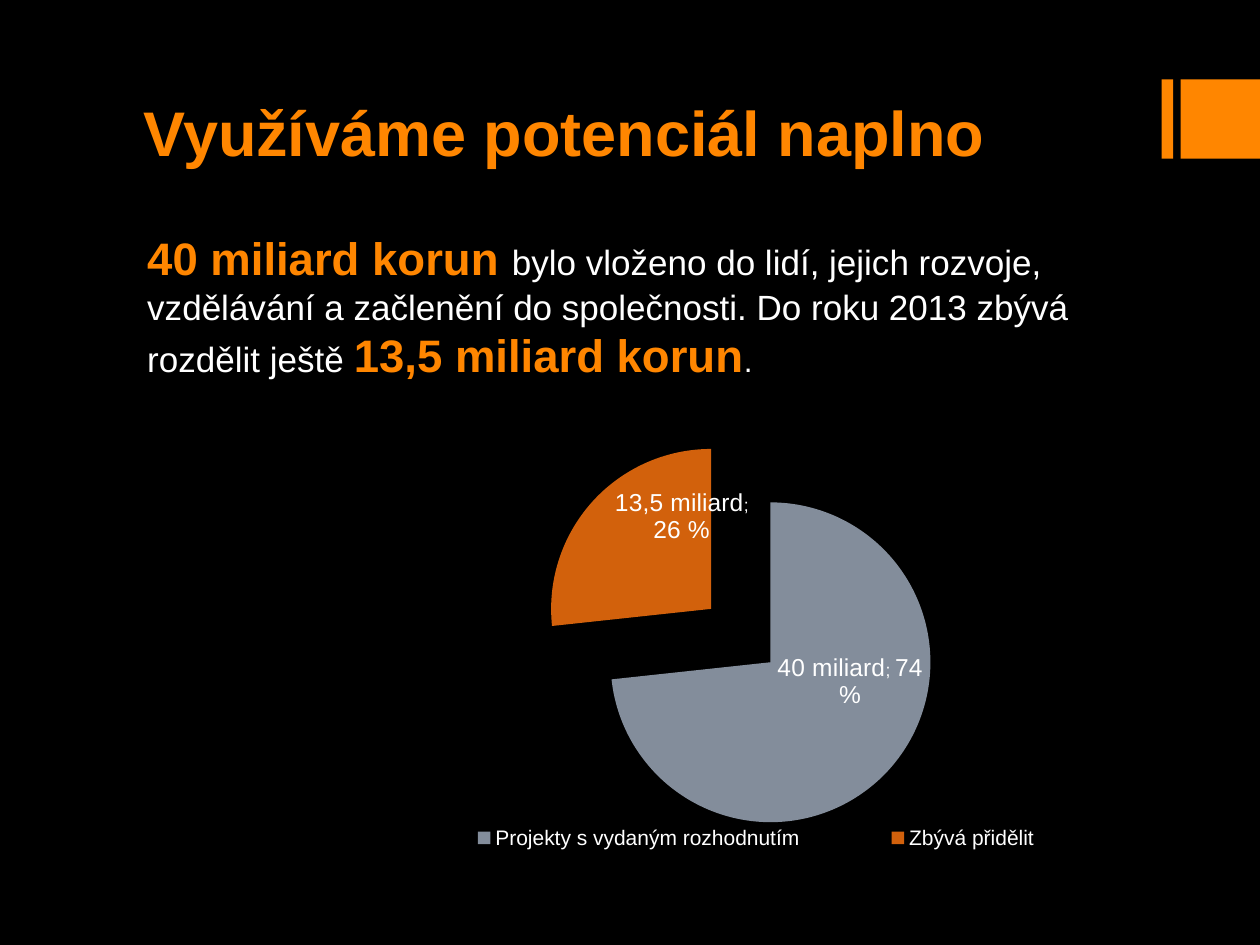
from lxml import etree
from pptx import Presentation
from pptx.chart.data import CategoryChartData
from pptx.dml.color import RGBColor
from pptx.enum.chart import XL_CHART_TYPE, XL_LABEL_POSITION, XL_LEGEND_POSITION
from pptx.enum.shapes import MSO_SHAPE
from pptx.enum.text import MSO_ANCHOR
from pptx.oxml.ns import qn
from pptx.util import Inches, Pt

PIE = XL_CHART_TYPE.PIE
CENTER = XL_LABEL_POSITION.CENTER
RIGHT = XL_LEGEND_POSITION.RIGHT
RECTANGLE = MSO_SHAPE.RECTANGLE
TOP, BOTTOM = MSO_ANCHOR.TOP, MSO_ANCHOR.BOTTOM

FONT = "Arial"
COLORS = {"background": "000000", "accent": "FF8600", "text": "FFFFFF",
          "allocated": "838D9B", "remaining": "D2610C"}

# Runs are (text, size, colour, bold)
TITLE = [("Využíváme potenciál naplno", 36, "accent", True)]
BODY = [
    ("40 miliard korun ", 26, "accent", True),
    ("bylo vloženo do lidí, jejich rozvoje, vzdělávání a začlenění do "
     "společnosti. Do roku 2013 zbývá rozdělit ještě ", 20, "text", False),
    ("13,5 miliard korun", 26, "accent", True),
    (".", 18, "text", False),
]
# Label paragraphs hold runs; the shift is a share of the chart's size
SLICES = [
    {"category": "Projekty s vydaným rozhodnutím", "value": 38700,
     "color": "allocated", "shift": (0.02, -0.07),
     "label": [[("40 miliard", 14, "text", False), ("; ", 10, "text", False),
                ("74 %", 14, "text", False)]]},
    {"category": "Zbývá přidělit", "value": 14100,
     "color": "remaining", "shift": (0.03, -0.08),
     "label": [[("13,5 miliard", 14, "text", False), (";", 10, "text", False)],
               [("26 %", 14, "text", False)]]},
]
NUMBER_FORMAT = "#,##0"
EXPLOSION = 25

TITLE_BOX = (1.04, 0.13, 8, 1.26)
BODY_BOX = (1.07, 1.78, 8.11, 1.35)
CHART_BOX = (2, 3.11, 8, 3.87)
BAR_TOP, BAR_HEIGHT = 0.63, 0.63
BARS = [(9.22, 0.09), (9.37, 0.63)]  # left, width
PLOT_LAYOUT = {"x": 0.28, "y": 0.09, "w": 0.41, "h": 0.82}
LEGEND_LAYOUT = {"x": 0.14, "y": 0.88, "w": 0.72, "h": 0.07}


def color(name):
    return RGBColor.from_string(COLORS[name])


def inches(box):
    return [Inches(length) for length in box]


def add_runs(paragraph, runs):
    for text, size, color_name, bold in runs:
        run = paragraph.add_run()
        run.text = text
        run.font.name = FONT
        run.font.size = Pt(size)
        run.font.bold = bold
        run.font.color.rgb = color(color_name)


def add_text(slide, box, runs, anchor):
    text_frame = slide.shapes.add_textbox(*inches(box)).text_frame
    text_frame.word_wrap = True
    text_frame.vertical_anchor = anchor
    add_runs(text_frame.paragraphs[0], runs)


def set_layout(parent, previous_tag, settings):
    """Put a manual chart layout right after the named child."""
    for old in parent.findall(qn("c:layout")):
        parent.remove(old)
    layout = etree.Element(qn("c:layout"))
    manual = etree.SubElement(layout, qn("c:manualLayout"))
    for name, value in settings.items():
        etree.SubElement(manual, qn(f"c:{name}")).set("val", str(value))
    if previous_tag is None:
        parent.insert(0, layout)
    else:
        parent.find(qn(previous_tag)).addnext(layout)


def add_pie(slide):
    data = CategoryChartData(number_format=NUMBER_FORMAT)
    data.categories = [part["category"] for part in SLICES]
    data.add_series("", [part["value"] for part in SLICES])
    chart = slide.shapes.add_chart(PIE, *inches(CHART_BOX), data).chart
    chart.has_title = False
    chart.font.name = FONT
    chart.font.size = Pt(10)
    chart.font.color.rgb = color("text")

    chart.has_legend = True
    legend = chart.legend
    legend.position = RIGHT
    legend.include_in_layout = True
    legend.font.name = FONT
    legend.font.size = Pt(12)
    legend.font.color.rgb = color("text")
    edges = {"xMode": "edge", "yMode": "edge"}
    set_layout(legend._element, "c:legendPos", edges | LEGEND_LAYOUT)
    plot_area = chart._chartSpace.chart.plotArea
    set_layout(plot_area, None,
               {"layoutTarget": "inner"} | edges | PLOT_LAYOUT)

    plot = chart.plots[0]
    plot.vary_by_categories = True
    series = plot.series[0]
    labels = series.data_labels
    labels.number_format = NUMBER_FORMAT
    labels.number_format_is_linked = False
    labels.show_value = labels.show_percentage = True
    labels.show_category_name = labels.show_series_name = True
    for index, part in enumerate(SLICES):
        point = series.points[index]
        point.format.fill.solid()
        point.format.fill.fore_color.rgb = color(part["color"])
        point.format.line.fill.background()
        label = point.data_label
        text_frame = label.text_frame
        for number, runs in enumerate(part["label"]):
            paragraph = (text_frame.add_paragraph() if number
                         else text_frame.paragraphs[0])
            add_runs(paragraph, runs)
        label.position = CENTER
        element = series._element.find(qn("c:dLbls")).findall(qn("c:dLbl"))[index]
        set_layout(element, "c:idx", dict(zip("xy", part["shift"])))
    explosion = etree.Element(qn("c:explosion"))
    explosion.set("val", str(EXPLOSION))
    series._element.find(qn("c:dPt")).addprevious(explosion)


def main():
    presentation = Presentation()
    presentation.slide_width, presentation.slide_height = inches((10, 7.5))
    slide = presentation.slides.add_slide(presentation.slide_layouts[6])
    slide.background.fill.solid()
    slide.background.fill.fore_color.rgb = color("background")

    for left, width in BARS:
        bar = slide.shapes.add_shape(
            RECTANGLE, *inches((left, BAR_TOP, width, BAR_HEIGHT)))
        bar.shadow.inherit = False
        bar.fill.solid()
        bar.fill.fore_color.rgb = color("accent")
        bar.line.fill.background()

    add_text(slide, TITLE_BOX, TITLE, BOTTOM)
    add_pie(slide)
    add_text(slide, BODY_BOX, BODY, TOP)
    presentation.save("out.pptx")


if __name__ == "__main__":
    main()
